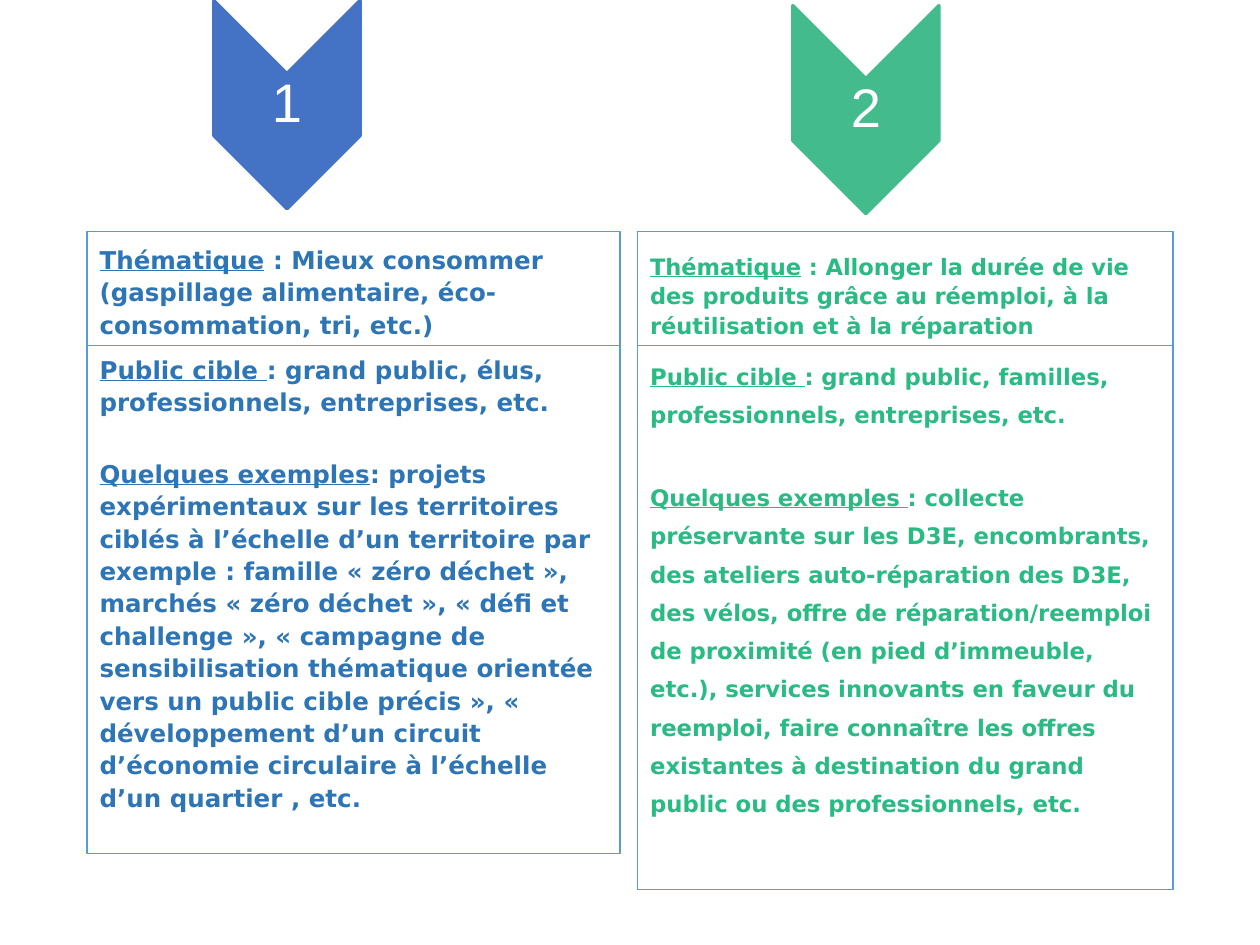
from lxml import etree
from pptx import Presentation
from pptx.dml.color import RGBColor
from pptx.enum import shapes, text
from pptx.oxml.ns import qn
from pptx.util import Pt

# Content: one entry per numbered theme; each paragraph is (underlined label, rest)
THEMES = [
    dict(
        number="1", arrow_color="4472C4", text_color="2E75B6",
        left=49.7, width=304.6, body_height=290.2, arrow_center=(164, 59.8),
        theme_size=14, body_size=14, body_spacing=1.1, gap=22.7,
        theme=[("Thématique", " : Mieux consommer (gaspillage alimentaire, "
                "éco-consommation, tri, etc.) ")],
        body=[
            ("Public cible ", ": grand public, élus, professionnels, entreprises, etc."),
            ("Quelques exemples", ": projets expérimentaux sur les territoires ciblés "
             "à l’échelle d’un territoire par exemple : famille « zéro déchet », "
             "marchés « zéro déchet », « défi et challenge », « campagne de "
             "sensibilisation thématique orientée vers un public cible précis », "
             "« développement d’un circuit d’économie circulaire à l’échelle "
             "d’un quartier , etc."),
        ],
    ),
    dict(
        number="2", arrow_color="43BB8D", text_color="2ABA83",
        left=364.3, width=306, body_height=311, arrow_center=(494.8, 62.6),
        theme_size=12.9, body_size=13, body_spacing=1.4, gap=25.6,
        theme=[("Thématique", " : Allonger la durée de vie des produits grâce au "
                "réemploi, à la réutilisation et à la réparation ")],
        body=[
            ("Public cible ", ": grand public, familles, professionnels, entreprises, etc."),
            ("Quelques exemples ", ": collecte préservante sur les D3E, encombrants, "
             "des ateliers auto-réparation des D3E, des vélos, offre de "
             "réparation/reemploi de proximité (en pied d’immeuble, etc.), services "
             "innovants en faveur du reemploi, faire connaître les offres existantes "
             "à destination du grand public ou des professionnels, etc."),
        ],
    ),
]
THEME_TOP, THEME_HEIGHT = 132.4, 65
BODY_TOP = THEME_TOP + THEME_HEIGHT
ARROW_LENGTH, ARROW_WIDTH = 118.8, 83.5
NUMBER_HEIGHT = 36
BORDER = "5B9BD5"


def rgb(value):
    return RGBColor.from_string(value)


def apply(target, **values):
    for name, value in values.items():
        setattr(target, name, value)


def place(shape, left, top, width, height):
    apply(shape, left=Pt(left), top=Pt(top), width=Pt(width), height=Pt(height))


def set_frame(frame, anchor, side, edge):
    apply(frame, word_wrap=True, auto_size=text.MSO_AUTO_SIZE.NONE,
          vertical_anchor=anchor, margin_left=Pt(side), margin_right=Pt(side),
          margin_top=Pt(edge), margin_bottom=Pt(edge))


def add_run(paragraph, words, color, **font):
    run = paragraph.add_run()
    run.text = words
    apply(run.font, **font)
    run.font.color.rgb = rgb(color)


def fill_panel(panel, paragraphs, color, size, spacing, gap, anchor):
    panel.line.color.rgb = rgb(BORDER)
    panel.line.width = Pt(0.75)
    frame = panel.text_frame
    set_frame(frame, anchor, 7.2, 3.6)
    for index, (label, rest) in enumerate(paragraphs):
        paragraph = frame.add_paragraph() if index else frame.paragraphs[0]
        apply(paragraph, alignment=text.PP_ALIGN.LEFT, line_spacing=spacing,
              space_before=Pt(gap if index else 0), space_after=Pt(0))
        # No bullet and no hanging indent
        properties = paragraph._p.get_or_add_pPr()
        properties.set("marL", "0")
        properties.set("indent", "0")
        etree.SubElement(properties, qn("a:buNone"))
        for words, underline in ((label, True), (rest, False)):
            add_run(paragraph, words, color, name="DejaVu Sans", size=Pt(size),
                    bold=True, underline=underline)


def add_arrow(slide, number, color, center):
    x, y = center
    group = slide.shapes.add_group_shape()
    arrow = group.shapes.add_shape(shapes.MSO_SHAPE.CHEVRON, 0, 0, 0, 0)
    place(arrow, x - ARROW_LENGTH / 2, y - ARROW_WIDTH / 2, ARROW_LENGTH, ARROW_WIDTH)
    arrow.rotation = 90
    arrow.shadow.inherit = False
    arrow.fill.solid()
    arrow.fill.fore_color.rgb = rgb(color)
    arrow.line.color.rgb = rgb(color)
    arrow.line.width = Pt(2)

    label = group.shapes.add_textbox(
        Pt(x - ARROW_WIDTH / 2), Pt(y - NUMBER_HEIGHT / 2), Pt(ARROW_WIDTH), Pt(NUMBER_HEIGHT))
    set_frame(label.text_frame, text.MSO_ANCHOR.MIDDLE, 1.5, 1.5)
    paragraph = label.text_frame.paragraphs[0]
    apply(paragraph, alignment=text.PP_ALIGN.CENTER, line_spacing=0.9)
    add_run(paragraph, number, "FFFFFF", name="Arial", size=Pt(31))


def main():
    deck = Presentation()
    apply(deck, slide_width=Pt(720), slide_height=Pt(540))
    # Comparison layout: a heading and a body for each column; the title is unused
    slide = deck.slides.add_slide(deck.slide_layouts[4])
    title = slide.shapes.title._element
    title.getparent().remove(title)
    panels = list(slide.placeholders)

    for column, theme in enumerate(THEMES):
        heading, body = panels[2 * column:2 * column + 2]
        place(heading, theme["left"], THEME_TOP, theme["width"], THEME_HEIGHT)
        fill_panel(heading, theme["theme"], theme["text_color"], theme["theme_size"],
                   1.1, 0, text.MSO_ANCHOR.BOTTOM)
        place(body, theme["left"], BODY_TOP, theme["width"], theme["body_height"])
        fill_panel(body, theme["body"], theme["text_color"], theme["body_size"],
                   theme["body_spacing"], theme["gap"], text.MSO_ANCHOR.TOP)
        add_arrow(slide, theme["number"], theme["arrow_color"], theme["arrow_center"])

    deck.save("out.pptx")


if __name__ == "__main__":
    main()
